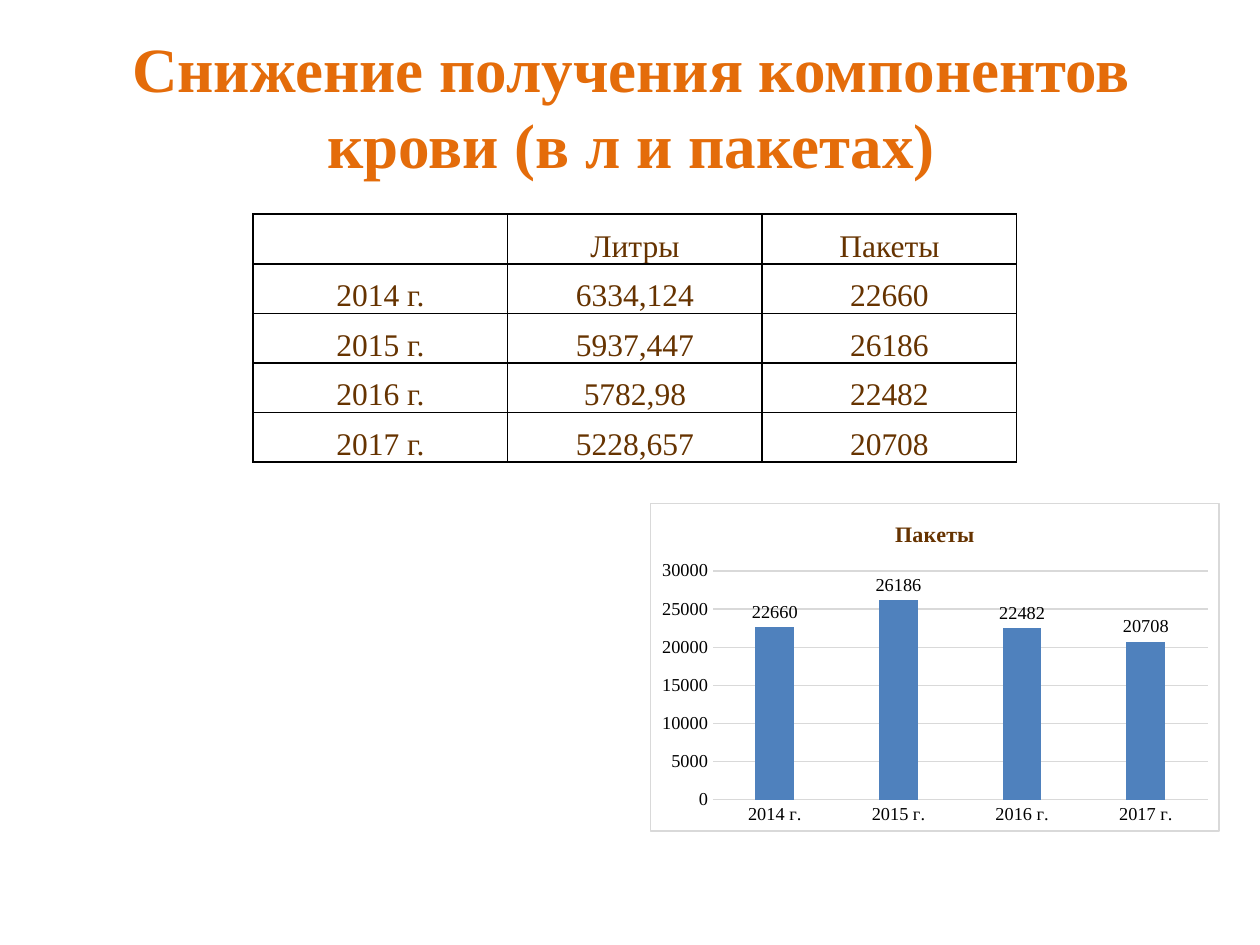
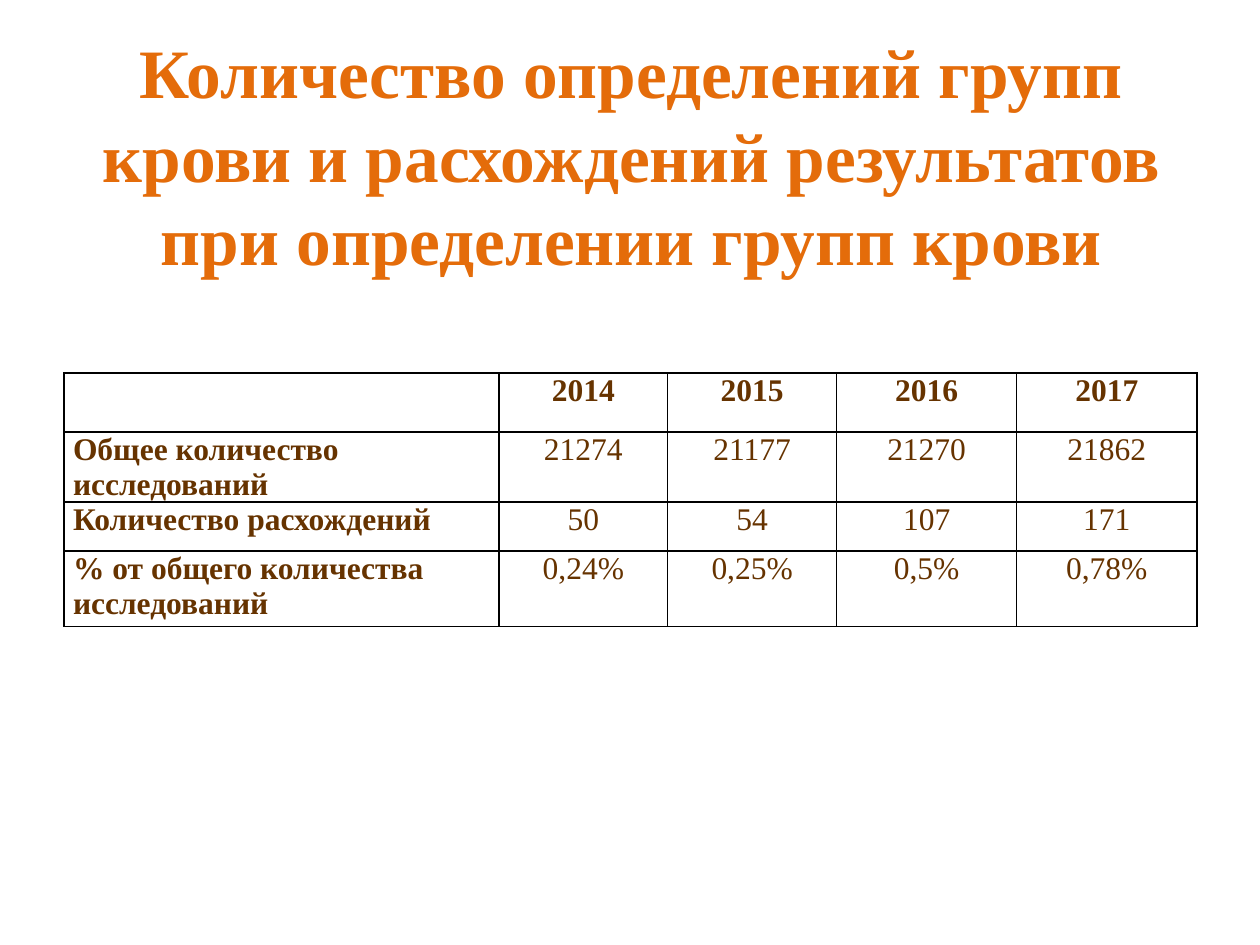
from lxml import etree
from pptx import Presentation, util as u
from pptx.chart.data import CategoryChartData
from pptx.dml.color import RGBColor
from pptx.enum import chart as charts, text
from pptx.oxml import parse_xml
from pptx.oxml.ns import nsdecls, qn

COLUMNS, ROWS = 100, 75
UNIT = u.Inches(10) // COLUMNS
FONT = "Times New Roman"
ORANGE, BROWN, BLACK, WHITE = "E46C0A", "663300", "000000", "FFFFFF"
GREY, BLUE = "D9D9D9", "4F81BD"


def color(hex_code):
    """Turn a hex string into a colour."""
    return RGBColor.from_string(hex_code)


def grid(*lengths):
    """Turn grid units into slide lengths."""
    return [u.Emu(round(length * UNIT)) for length in lengths]


def style_font(font, size, hex_code, bold=False):
    """Give a font the shared typeface and its own size, colour and weight."""
    font.name, font.size, font.bold = FONT, u.Pt(size), bold
    font.color.rgb = color(hex_code)


def add_titled_slide(presentation, title, size, height):
    """Add a title-only slide with a centred orange title."""
    slide = presentation.slides.add_slide(presentation.slide_layouts[5])
    shape = slide.shapes.title
    shape.left, shape.top, shape.width, shape.height = grid(5.1, 2.1, 90, height)
    frame = shape.text_frame
    frame.text = title
    frame.word_wrap = True
    frame.auto_size = text.MSO_AUTO_SIZE.NONE
    frame.vertical_anchor = text.MSO_ANCHOR.MIDDLE
    paragraph = frame.paragraphs[0]
    paragraph.alignment = text.PP_ALIGN.CENTER
    style_font(paragraph.font, size, ORANGE, True)
    return slide


def add_borders(cell):
    """Draw a thin black line on every side of a cell."""
    properties = cell._tc.get_or_add_tcPr()
    for side in "LRTB":
        line = etree.SubElement(properties, qn(f"a:ln{side}"), w=str(u.Pt(1)))
        fill = etree.SubElement(line, qn("a:solidFill"))
        etree.SubElement(fill, qn("a:srgbClr"), val=BLACK)


def add_grid_table(slide, left, top, widths, heights, rows, margins, anchor,
                   bold_headings=False):
    """Add a bordered table whose headings may be bold with left-aligned row names."""
    place = grid(left, top, sum(widths), sum(heights))
    table = slide.shapes.add_table(len(rows), len(widths), *place).table
    table.first_row = table.horz_banding = False
    for column, width in zip(table.columns, grid(*widths)):
        column.width = width
    for row, height in zip(table.rows, grid(*heights)):
        row.height = height
    for row_index, values in enumerate(rows):
        for column_index, value in enumerate(values):
            cell = table.cell(row_index, column_index)
            cell.text = value
            cell.vertical_anchor = anchor
            (cell.margin_left, cell.margin_top,
             cell.margin_right, cell.margin_bottom) = grid(*margins)
            add_borders(cell)
            cell.fill.solid()
            cell.fill.fore_color.rgb = color(WHITE)
            row_name = bold_headings and column_index == 0
            paragraph = cell.text_frame.paragraphs[0]
            paragraph.alignment = text.PP_ALIGN.LEFT if row_name else text.PP_ALIGN.CENTER
            heading = bold_headings and 0 in (row_index, column_index)
            style_font(paragraph.font, 18, BROWN, heading)


def style_line(line, hex_code):
    """Give a chart line its colour and thin width."""
    line.color.rgb = color(hex_code)
    line.width = u.Pt(0.75)


def frame_chart(chart):
    """Give the chart area a white fill and a grey border."""
    area = parse_xml(
        f'<c:spPr {nsdecls("c", "a")}>'
        f'<a:solidFill><a:srgbClr val="{WHITE}"/></a:solidFill>'
        f'<a:ln w="{u.Pt(0.75)}"><a:solidFill><a:srgbClr val="{GREY}"/></a:solidFill></a:ln>'
        '</c:spPr>')
    chart._chartSpace.find(qn("c:chart")).addnext(area)


def add_column_chart(slide, place, name, categories, values):
    """Add a titled column chart with one labelled series."""
    data = CategoryChartData()
    data.categories = categories
    data.add_series(name, values)
    chart = slide.shapes.add_chart(
        charts.XL_CHART_TYPE.COLUMN_CLUSTERED, *grid(*place), data).chart
    style_font(chart.font, 10.5, BLACK)
    frame_chart(chart)
    chart.has_legend = False
    chart.has_title = True
    title = chart.chart_title
    title.include_in_layout = False
    title.text_frame.text = name
    style_font(title.text_frame.paragraphs[0].font, 12.6, BROWN, True)

    for axis in (chart.category_axis, chart.value_axis):
        axis.major_tick_mark = axis.minor_tick_mark = charts.XL_TICK_MARK.NONE
    style_line(chart.category_axis.format.line, GREY)
    chart.value_axis.format.line.fill.background()
    style_line(chart.value_axis.major_gridlines.format.line, GREY)

    plot = chart.plots[0]
    plot.gap_width, plot.overlap, plot.vary_by_categories = 219, -27, False
    fill = plot.series[0].format.fill
    fill.solid()
    fill.fore_color.rgb = color(BLUE)
    plot.has_data_labels = True
    plot.data_labels.show_value = True
    plot.data_labels.position = charts.XL_LABEL_POSITION.OUTSIDE_END


def add_components_slide(presentation):
    """Show blood components by year as a table and a chart of packs."""
    slide = add_titled_slide(
        presentation, "Снижение получения компонентов крови (в л и пакетах)", 36, 12.5)
    years = ["2014 г.", "2015 г.", "2016 г.", "2017 г."]
    litres = ["6334,124", "5937,447", "5782,98", "5228,657"]
    packs = [22660, 26186, 22482, 20708]
    add_column_chart(slide, (51.6, 39.9, 45.2, 26.1), "Пакеты", years, packs)
    rows = [("", "Литры", "Пакеты"), *zip(years, litres, map(str, packs))]
    add_grid_table(slide, 20.1, 17, [20.2] * 3, [3.94] * 5, rows,
                   (0.1, 0.1, 0.1, 0), text.MSO_ANCHOR.BOTTOM)


def add_blood_groups_slide(presentation):
    """Show blood group tests and their discrepancies by year."""
    slide = add_titled_slide(
        presentation,
        "Количество определений групп крови и расхождений результатов "
        "при определении групп крови", 39.6, 20.3)
    rows = [
        ("", "2014", "2015", "2016", "2017"),
        ("Общее количество исследований", "21274", "21177", "21270", "21862"),
        ("Количество расхождений", "50", "54", "107", "171"),
        ("% от общего количества исследований", "0,24%", "0,25%", "0,5%", "0,78%"),
    ]
    add_grid_table(slide, 5.1, 29.6, [34.5, 13.4, 13.4, 14.3, 14.3],
                   [4.7, 5.5, 3.9, 6], rows, (0.7, 0, 0.7, 0),
                   text.MSO_ANCHOR.TOP, bold_headings=True)


def main():
    """Build and save the presentation."""
    presentation = Presentation()
    presentation.slide_width, presentation.slide_height = grid(COLUMNS, ROWS)
    add_components_slide(presentation)
    add_blood_groups_slide(presentation)
    presentation.save("out.pptx")


if __name__ == "__main__":
    main()
